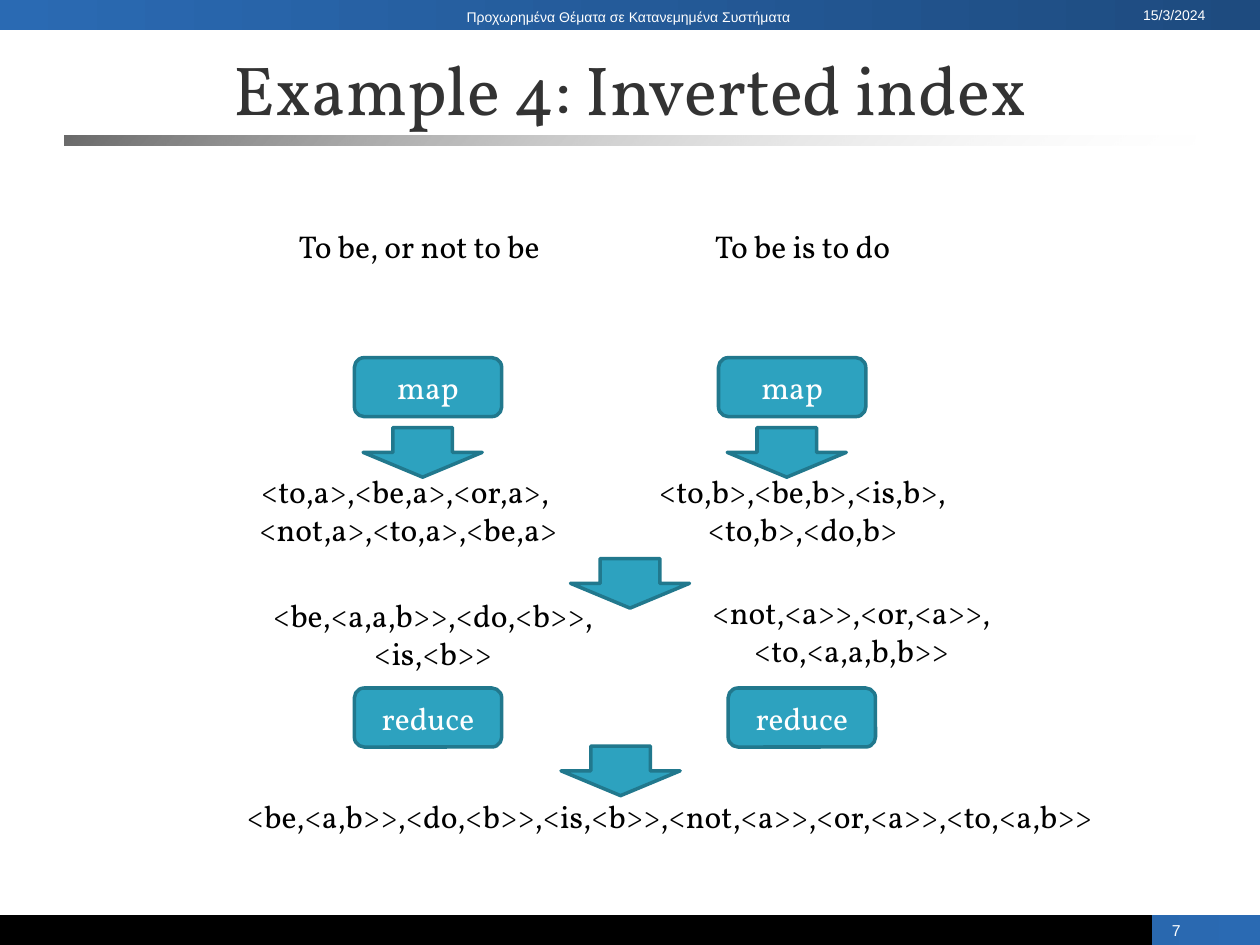
from lxml import etree
from pptx import Presentation
from pptx.dml.color import RGBColor
from pptx.enum import shapes, text
from pptx.oxml.ns import qn
from pptx.util import Cm, Pt

WHITE = RGBColor(0xFF, 0xFF, 0xFF)
BLACK = RGBColor(0, 0, 0)
CHARCOAL = RGBColor(0x33, 0x33, 0x33)
TEAL = RGBColor(0x2D, 0xA2, 0xBF)
DARK_TEAL = RGBColor(0x21, 0x78, 0x8D)
BLUE = RGBColor(0x2A, 0x6A, 0xB3)
NAVY = RGBColor(0x1E, 0x4B, 0x7F)
DEEP_BLUE = RGBColor(0x1B, 0x45, 0x75)
RULE_DARK = RGBColor(0x29, 0x29, 0x29)
RULE_LIGHT = RGBColor(0xE3, 0xE3, 0xE3)

SLIDE_W, SLIDE_H = 25.4, 19.05
NODE_W, NODE_H = 2.97, 1.19
ARROW_LENGTH, ARROW_SPAN = 1.0, 2.4


def write(frame, content, size=18, font="Vollkorn", color=BLACK,
          align=text.PP_ALIGN.CENTER, anchor=text.MSO_ANCHOR.TOP):
    """Fill a text frame, one paragraph per line of content."""
    frame.word_wrap = True
    frame.vertical_anchor = anchor
    for index, line in enumerate(content.split("\n")):
        paragraph = frame.add_paragraph() if index else frame.paragraphs[0]
        paragraph.alignment = align
        run = paragraph.add_run()
        run.text = line
        run.font.size = Pt(size)
        run.font.name = font
        run.font.color.rgb = color


def label(slide, box, content, **style):
    """Add a text box at (left, top, width, height) in centimetres."""
    frame = slide.shapes.add_textbox(*map(Cm, box)).text_frame
    write(frame, content, **style)
    return frame


def block(slide, preset, box, fill=None, line=None, width=2):
    """Add a preset shape without shadow, optionally filled and outlined."""
    shape = slide.shapes.add_shape(preset, *map(Cm, box))
    shape.shadow.inherit = False
    if fill is not None:
        shape.fill.solid()
        shape.fill.fore_color.rgb = fill
    if line is None:
        shape.line.fill.background()
    else:
        shape.line.color.rgb = line
        shape.line.width = Pt(width)
    return shape


def gradient_bar(slide, box, colors, angle=0, alphas=()):
    """Add a rectangle that blends between two colours."""
    bar = block(slide, shapes.MSO_SHAPE.RECTANGLE, box)
    bar.fill.gradient()
    bar.fill.gradient_angle = angle
    for stop, color in zip(bar.fill.gradient_stops, colors):
        stop.color.rgb = color
    for node, alpha in zip(bar.element.spPr.iter(qn("a:srgbClr")), alphas):
        etree.SubElement(node, qn("a:alpha")).set("val", str(alpha * 1000))


def node(slide, center, top, name):
    """Add a rounded processing step centred on a column."""
    step = block(slide, shapes.MSO_SHAPE.ROUNDED_RECTANGLE,
                 (center - NODE_W / 2, top, NODE_W, NODE_H), TEAL, DARK_TEAL)
    write(step.text_frame, name, color=WHITE, anchor=text.MSO_ANCHOR.MIDDLE)


def down_arrow(slide, center, middle):
    """Add a block arrow pointing down around a centre point."""
    arrow = block(slide, shapes.MSO_SHAPE.RIGHT_ARROW,
                  (center - ARROW_LENGTH / 2, middle - ARROW_SPAN / 2,
                   ARROW_LENGTH, ARROW_SPAN), TEAL, DARK_TEAL)
    arrow.rotation = 90


def header(slide, box):
    """Draw the top band with course name and date."""
    left, top, width, height = box
    gradient_bar(slide, box, (BLUE, NAVY))
    small = dict(size=8, font="Arial", color=WHITE)
    label(slide, (left + 5.74, top + 0.05, 13.87, 0.58),
          "Προχωρημένα Θέματα σε Κατανεμημένα Συστήματα", **small)
    label(slide, (left + width - 3.45, top, 3.45, 0.58), "15/3/2024", **small)


def footer(slide, box):
    """Draw the bottom band with the slide number."""
    left, top, width, height = box
    gradient_bar(slide, box, (DEEP_BLUE, BLUE))
    block(slide, shapes.MSO_SHAPE.RECTANGLE,
          (left, top + 0.02, 23.22, height - 0.02), BLACK, BLACK, 0.75)
    number = label(slide, (left + 21.69, top, 2.11, height), "7", size=9,
                   font="Arial", color=WHITE, align=text.PP_ALIGN.RIGHT,
                   anchor=text.MSO_ANCHOR.MIDDLE)
    number.margin_left = number.margin_right = 0
    number.margin_top = number.margin_bottom = 0


def heading(slide, box):
    """Format the title placeholder and draw the rule under it."""
    left, top, width, height = box
    title = slide.shapes.title
    title.left, title.top, title.width, title.height = map(Cm, box)
    write(title.text_frame, "Example 4: Inverted index", size=39.6,
          color=CHARCOAL, anchor=text.MSO_ANCHOR.BOTTOM)
    gradient_bar(slide, (left + 1.3, top + height, 22.8, 0.2),
                 (RULE_DARK, RULE_LIGHT), angle=315, alphas=(70, 0))


def map_column(slide, box, sentence, pairs, sentence_shift, node_shift):
    """Show a sentence, its map step and the pairs it emits."""
    left, top, width, height = box
    center = left + width / 2
    label(slide, (left + sentence_shift, top, width, 1.02), sentence)
    node(slide, center + node_shift, top + 2.76, "map")
    down_arrow(slide, center + node_shift - 0.11, top + 4.67)
    label(slide, (left, top + 4.95, width, height - 4.95), pairs)


def reduce_column(slide, box, groups, node_top, node_shift):
    """Show grouped pairs above their reduce step."""
    left, top, width, height = box
    label(slide, (left, top, width, 1.8), groups)
    node(slide, left + width / 2 + node_shift, top + node_top, "reduce")


def result(slide, box):
    """Show the final inverted index below its arrow."""
    left, top, width, height = box
    down_arrow(slide, left + 8.14, top - 0.41)
    label(slide, box,
          "<be,<a,b>>,<do,<b>>,<is,<b>>,<not,<a>>,<or,<a>>,<to,<a,b>>")


def main():
    """Build the slide and save it."""
    deck = Presentation()
    deck.slide_width, deck.slide_height = Cm(SLIDE_W), Cm(SLIDE_H)
    slide = deck.slides.add_slide(deck.slide_layouts[5])
    header(slide, (0, 0, SLIDE_W, 0.6))
    footer(slide, (0, 18.44, SLIDE_W, 0.61))
    heading(slide, (0, 0.76, SLIDE_W, 1.98))
    map_column(slide, (2.77, 4.45, 10.92, 6.75), "To be, or not to be",
               "<to,a>,<be,a>,<or,a>, \n<not,a>,<to,a>,<be,a>", 0.22, 0.4)
    map_column(slide, (9.93, 4.45, 12.5, 6.75), "To be is to do",
               "<to,b>,<be,b>,<is,b>,\n<to,b>,<do,b>", 0, -0.21)
    down_arrow(slide, SLIDE_W / 2, 11.76)
    reduce_column(slide, (5.16, 11.89, 7.14, 3.17),
                  "<be,<a,a,b>>,<do,<b>>,<is,<b>>", 1.98, -0.1)
    reduce_column(slide, (12.9, 11.84, 8.53, 3.22),
                  "<not,<a>>,<or,<a>>,\n<to,<a,a,b,b>>", 2.03, -1)
    result(slide, (4.37, 15.95, 18.26, 1.02))
    deck.save("out.pptx")


if __name__ == "__main__":
    main()
